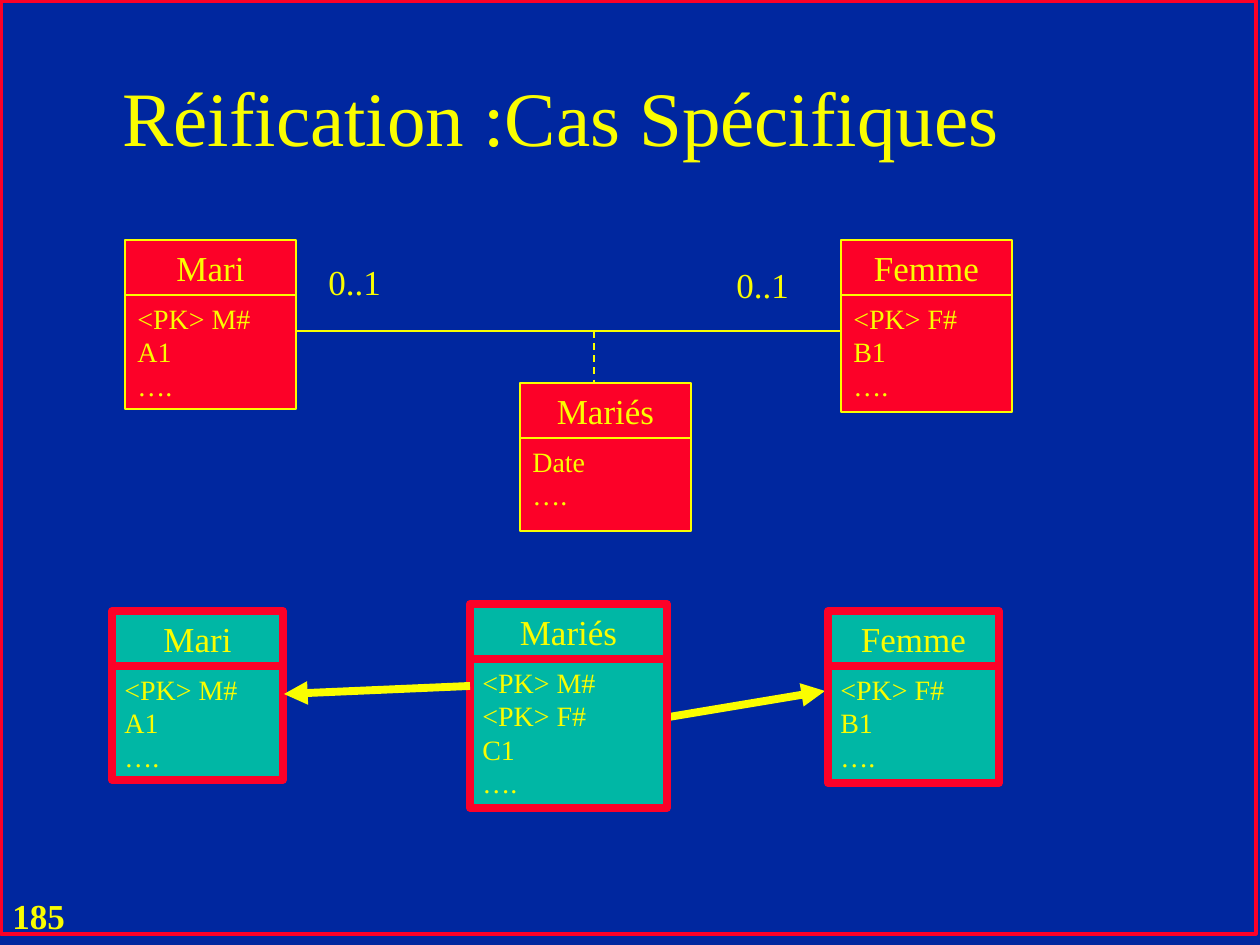
from dataclasses import dataclass

import pptx
import pptx.dml.color
import pptx.enum.dml
import pptx.enum.shapes
import pptx.enum.text
import pptx.oxml
import pptx.oxml.ns
import pptx.util

PX = 914400 / 126
HEADER_HEIGHT = 55
ALIGN = pptx.enum.text.PP_ALIGN
ANCHOR = pptx.enum.text.MSO_ANCHOR
RECTANGLE = pptx.enum.shapes.MSO_SHAPE.RECTANGLE


@dataclass(frozen=True)
class Theme:
    """Colours, font, type sizes and line weights of the slide."""
    navy: str = "00279F"
    yellow: str = "FAFD00"
    red: str = "FC0128"
    teal: str = "00B7A5"
    font: str = "Times New Roman"
    title: int = 44
    heading: int = 20
    attribute: int = 16
    thin: float = 1
    frame: float = 2
    thick: float = 4.5


THEME = Theme()
CONCEPT = {"fill": THEME.red, "line": THEME.yellow, "weight": THEME.thin}
RELATION = {"fill": THEME.teal, "line": THEME.red, "weight": THEME.thick}
MARI = ("Mari", ["<PK> M#", "A1", "…."])
FEMME = ("Femme", ["<PK> F#", "B1", "…."])


def px(*lengths):
    """Turn pixel lengths into EMU."""
    return [pptx.util.Emu(round(length * PX)) for length in lengths]


def rgb(code):
    """Return the colour of a hex code."""
    return pptx.dml.color.RGBColor.from_string(code)


def assign(target, values):
    """Set each attribute of a dict of format values."""
    for key, value in values.items():
        setattr(target, key, value)


def write(frame, lines, size, align=ALIGN.LEFT, anchor=ANCHOR.TOP, wrap=True, bold=False):
    """Fill a text frame with one paragraph per line."""
    assign(frame, {"text": "\n".join(lines), "word_wrap": wrap, "vertical_anchor": anchor})
    for paragraph in frame.paragraphs:
        paragraph.alignment = align
        for run in paragraph.runs:
            assign(run.font, {"name": THEME.font, "size": pptx.util.Pt(size), "bold": bold})
            run.font.color.rgb = rgb(THEME.yellow)


def add_box(slide, box, line, weight, fill=None):
    """Add an outlined rectangle, filled if a colour is given."""
    rectangle = slide.shapes.add_shape(RECTANGLE, *px(*box))
    rectangle.shadow.inherit = False
    if fill:
        rectangle.fill.solid()
        rectangle.fill.fore_color.rgb = rgb(fill)
    else:
        rectangle.fill.background()
    rectangle.line.color.rgb = rgb(line)
    rectangle.line.width = pptx.util.Pt(weight)
    return rectangle


def add_label(slide, box, text, **style):
    """Add a free text label."""
    label = slide.shapes.add_textbox(*px(*box))
    write(label.text_frame, [text], THEME.heading, **style)


def add_entity(slide, box, content, style):
    """Add a class card: a name header above its attributes."""
    left, top, width, height = box
    name, attributes = content
    header = add_box(slide, (left, top, width, HEADER_HEIGHT), **style)
    write(header.text_frame, [name], THEME.heading, ALIGN.CENTER, ANCHOR.MIDDLE, wrap=False)
    body = add_box(slide, (left, top + HEADER_HEIGHT, width, height - HEADER_HEIGHT), **style)
    write(body.text_frame, attributes, THEME.attribute)


def add_link(slide, start, end, weight, dashed=False, arrow=False):
    """Add a straight link, optionally dashed or with an arrowhead at its end."""
    link = slide.shapes.add_connector(
        pptx.enum.shapes.MSO_CONNECTOR.STRAIGHT, *px(*start, *end))
    link.line.color.rgb = rgb(THEME.yellow)
    link.line.width = pptx.util.Pt(weight)
    if dashed:
        link.line.dash_style = pptx.enum.dml.MSO_LINE.DASH
    if arrow:
        tail = pptx.oxml.ns.qn("a:tailEnd")
        link.line._get_or_add_ln().append(pptx.oxml.xmlchemy.OxmlElement("a:tailEnd"))
        link.line._get_or_add_ln().find(tail).set("type", "triangle")
    link._element.spPr.append(pptx.oxml.xmlchemy.OxmlElement("a:effectLst"))


def add_backdrop(slide, box):
    """Set the background, the frame and the page number."""
    left, top, width, height = box
    slide.background.fill.solid()
    slide.background.fill.fore_color.rgb = rgb(THEME.navy)
    add_box(slide, (left + 1, top + 1, width - 5, height - 12), THEME.red, THEME.frame)
    add_label(slide, (left, top + 888, 87, 54), "185", wrap=False, bold=True)


def add_title(slide, box):
    """Place and fill the title placeholder."""
    title = slide.shapes.title
    assign(title, dict(zip(("left", "top", "width", "height"), px(*box))))
    write(title.text_frame, ["Réification :Cas Spécifiques"], THEME.title, anchor=ANCHOR.MIDDLE)


def add_association(slide, box):
    """Draw the conceptual model with its association class."""
    left, top, width, height = box
    card = 171
    axis = top + 91
    branch = left + 469
    add_entity(slide, (left, top, card, 169), MARI, CONCEPT)
    add_entity(slide, (left + width - card, top, card, 172), FEMME, CONCEPT)
    add_link(slide, (left + card, axis), (left + width - card, axis), THEME.thin)
    add_entity(slide, (left + 395, top + 143, card, height - 143),
               ("Mariés", ["Date", "…."]), CONCEPT)
    add_link(slide, (branch, axis), (branch, top + 142), THEME.thin, dashed=True)
    add_label(slide, (left + 191, top + 14, 91, 54), "0..1")
    add_label(slide, (left + 599, top + 17, 96, 54), "0..1")


def add_reification(slide, box):
    """Draw the relational model with its reified association."""
    left, top, width, height = box
    card = 171
    add_link(slide, (left + 557, top + 113), (left + 713, top + 87), THEME.thick, arrow=True)
    add_entity(slide, (left, top + 7, card, 169), MARI, RELATION)
    add_entity(slide, (left + width - card, top + 7, card, 172), FEMME, RELATION)
    add_entity(slide, (left + 358, top, 197, height),
               ("Mariés", ["<PK> M#", "<PK> F#", "C1", "…."]), RELATION)
    add_link(slide, (left + 358, top + 82), (left + 172, top + 90), THEME.thick, arrow=True)


def main():
    """Build and save the slide."""
    deck = pptx.Presentation()
    assign(deck, dict(zip(("slide_width", "slide_height"), px(1260, 945))))
    slide = deck.slides.add_slide(deck.slide_layouts[5])
    add_backdrop(slide, (0, 0, 1260, 945))
    add_title(slide, (110, 37, 1071, 157))
    add_association(slide, (125, 240, 887, 291))
    add_reification(slide, (112, 604, 887, 204))
    deck.save("out.pptx")


if __name__ == "__main__":
    main()
